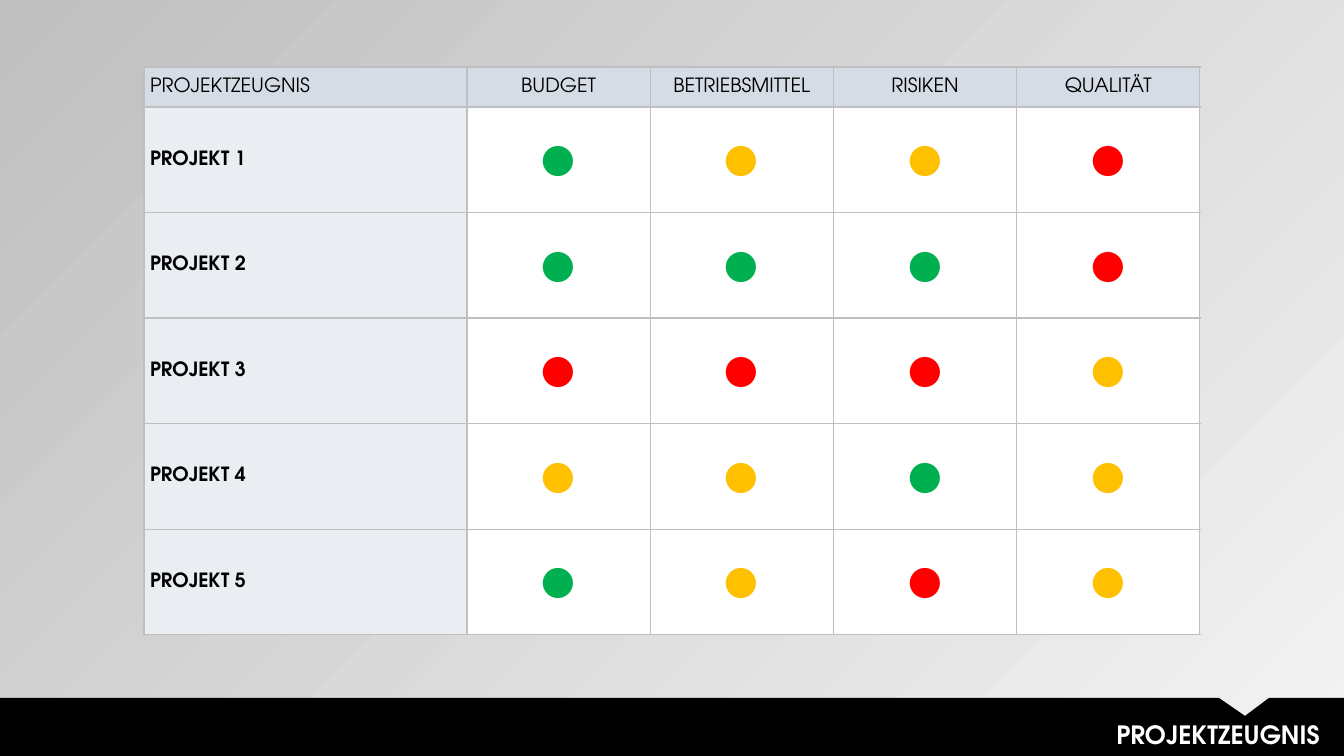
from lxml import etree
from pptx import Presentation
from pptx.dml.color import RGBColor
from pptx.enum.text import MSO_ANCHOR, MSO_AUTO_SIZE, PP_ALIGN
from pptx.oxml.ns import qn
from pptx.util import Pt

LEFT, CENTER, RIGHT = PP_ALIGN.LEFT, PP_ALIGN.CENTER, PP_ALIGN.RIGHT
TOP, MIDDLE = MSO_ANCHOR.TOP, MSO_ANCHOR.MIDDLE
NO_FIT = MSO_AUTO_SIZE.NONE

THEME = {
    "font": "TeX Gyre Adventor",
    "label_size": 14, "dot_size": 60, "title_size": 18, "border_width": 1,
    "text": "000000", "title": "FFFFFF", "band": "000000",
    "header": "D6DCE5", "project": "EAEEF3", "cell": "FFFFFF", "border": "BFBFBF",
    "bg_light": "F2F2F2", "bg_dark": "BFBFBF",
    "G": "00B050", "Y": "FFC000", "R": "FF0000",
}

HEADERS = ["PROJEKTZEUGNIS", "BUDGET", "BETRIEBSMITTEL", "RISIKEN", "QUALITÄT"]
RATINGS = ["GYYR", "GGGR", "RRRY", "YYGY", "GYRY"]

SCALE = 12192000 / 1344


def px(n):
    return round(n * SCALE)


def style_text(tf, size, color, align, bold=False):
    p = tf.paragraphs[0]
    p.alignment = align
    font = p.runs[0].font
    font.name = THEME["font"]
    font.size = Pt(THEME[size])
    font.bold = bold
    font.color.rgb = RGBColor.from_string(THEME[color])


prs = Presentation()
prs.slide_width, prs.slide_height = px(1344), px(756)
s = prs.slides.add_slide(prs.slide_layouts[5])

bg = s.background.fill
bg.gradient()
bg.gradient_angle = 135
for stop, color in zip(bg.gradient_stops, ["bg_light", "bg_dark"]):
    stop.color.rgb = RGBColor.from_string(THEME[color])

builder = s.shapes.build_freeform(0, 698, scale=SCALE)
builder.add_line_segments(
    [(1219, 698), (1245, 716), (1269, 698), (1344, 698), (1344, 756), (0, 756)], close=True)
band = builder.convert_to_shape()
band.shadow.inherit = False
band.fill.solid()
band.fill.fore_color.rgb = RGBColor.from_string(THEME["band"])
band.line.fill.background()

rows, cols = len(RATINGS) + 1, len(HEADERS)
width, height, first_col, header_row = 1056, 568, 323, 40
table = s.shapes.add_table(rows, cols, px(144), px(67), px(width), px(height)).table
table.first_row = table.horz_banding = False
for i, col in enumerate(table.columns):
    col.width = px(first_col if i == 0 else (width - first_col) / (cols - 1))
for i, row in enumerate(table.rows):
    row.height = px(header_row if i == 0 else (height - header_row) / (rows - 1))

for r in range(rows):
    for c in range(cols):
        cell = table.cell(r, c)
        cell.vertical_anchor = MIDDLE
        cell.margin_left = cell.margin_right = px(6)
        cell.margin_top = cell.margin_bottom = 0
        tcPr = cell._tc.get_or_add_tcPr()
        for side in ("a:lnL", "a:lnR", "a:lnT", "a:lnB"):
            ln = etree.SubElement(tcPr, qn(side), w=str(Pt(THEME["border_width"])))
            solid = etree.SubElement(ln, qn("a:solidFill"))
            etree.SubElement(solid, qn("a:srgbClr"), val=THEME["border"])
        align = LEFT if c == 0 else CENTER
        if r == 0:
            fill = "header"
            cell.text_frame.text = HEADERS[c]
            style_text(cell.text_frame, "label_size", "text", align)
        elif c == 0:
            fill = "project"
            cell.text_frame.text = f"PROJEKT {r}"
            style_text(cell.text_frame, "label_size", "text", align, bold=True)
        else:
            fill = "cell"
            cell.text_frame.text = "•"
            style_text(cell.text_frame, "dot_size", RATINGS[r - 1][c - 1], align)
        cell.fill.solid()
        cell.fill.fore_color.rgb = RGBColor.from_string(THEME[fill])

title = s.shapes.title
title.left, title.top, title.width, title.height = px(417), px(714), px(913), px(40)
tf = title.text_frame
tf.text = "PROJEKTZEUGNIS"
tf.word_wrap = True
tf.auto_size = NO_FIT
tf.vertical_anchor = TOP
style_text(tf, "title_size", "title", RIGHT, bold=True)
s.shapes._spTree.append(title._element)

prs.save("out.pptx")
